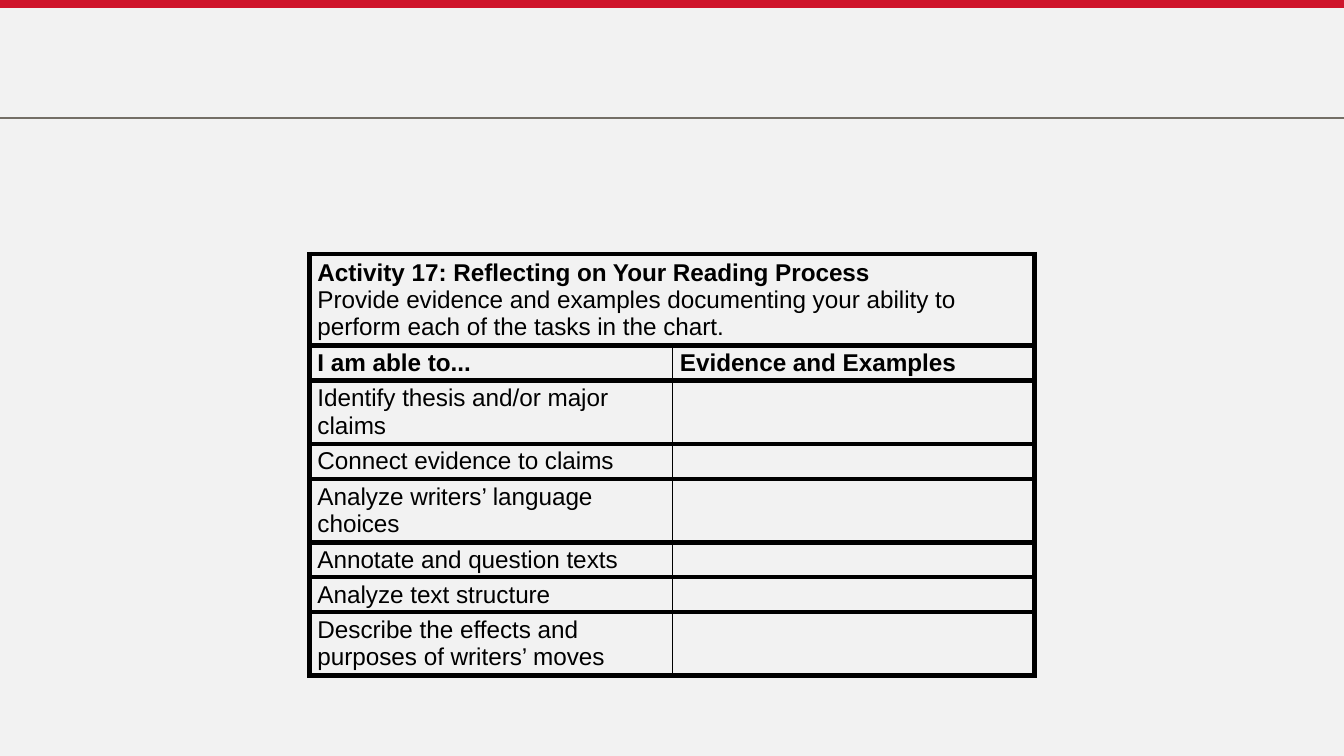
from lxml.etree import SubElement
from pptx import Presentation
from pptx.dml.color import RGBColor
from pptx.enum.shapes import MSO_CONNECTOR, MSO_SHAPE
from pptx.enum.text import MSO_ANCHOR
from pptx.oxml import parse_xml
from pptx.oxml.ns import nsdecls, qn
from pptx.util import Cm, Pt

COLORS = {"background": "F2F2F2", "bar": "CF142B", "rule": "746F66", "ink": "000000"}
WIDTH, HEIGHT = 25.4, 14.29
TABLE_LEFT, TABLE_TOP, COLUMN_WIDTH = 5.85, 4.8, 6.85
ONE_LINE, TWO_LINES, THREE_LINES = 0.66, 1.2, 1.73
THIN, ROW_RULE, LEFT_EDGE, RIGHT_EDGE = 0.5, 2.72, 2.96, 3.04
TITLE = "Activity 17: Reflecting on Your Reading Process"
INSTRUCTION = (
    "Provide evidence and examples documenting your ability to "
    "perform each of the tasks in the chart."
)
HEADINGS = ("I am able to...", "Evidence and Examples")
TASKS = [
    ("Identify thesis and/or major claims", TWO_LINES),
    ("Connect evidence to claims", ONE_LINE),
    ("Analyze writers’ language choices", TWO_LINES),
    ("Annotate and question texts", ONE_LINE),
    ("Analyze text structure", ONE_LINE),
    ("Describe the effects and purposes of writers’ moves", TWO_LINES),
]


def color(name):
    """Return the named colour."""
    return RGBColor.from_string(COLORS[name])


def add_bar(slide):
    """Add the coloured bar along the top edge."""
    bar = slide.shapes.add_shape(MSO_SHAPE.RECTANGLE, 0, 0, Cm(WIDTH), Cm(0.15))
    bar.shadow.inherit = False
    bar.fill.solid()
    bar.fill.fore_color.rgb = color("bar")
    bar.line.fill.background()


def add_rule(slide):
    """Add the thin rule below the title area."""
    top = Cm(2.23)
    rule = slide.shapes.add_connector(MSO_CONNECTOR.STRAIGHT, 0, top, Cm(WIDTH), top)
    rule.line.color.rgb = color("rule")
    rule.line.width = Pt(0.75)
    SubElement(rule._element.spPr, qn("a:effectLst"))


def set_borders(cell, left, right, top, bottom):
    """Draw the four borders of a cell with widths in points."""
    properties = cell._tc.get_or_add_tcPr()
    for index, (side, width) in enumerate(zip("LRTB", (left, right, top, bottom))):
        border = parse_xml(
            f'<a:ln{side} {nsdecls("a")} w="{Pt(width)}"><a:solidFill>'
            f'<a:srgbClr val="{COLORS["ink"]}"/></a:solidFill></a:ln{side}>'
        )
        properties.insert(index, border)


def fill_cell(cell, *lines):
    """Write (text, bold) lines into a transparent cell."""
    cell.fill.background()
    cell.vertical_anchor = MSO_ANCHOR.MIDDLE
    cell.margin_left = cell.margin_right = Cm(0.15)
    cell.margin_top = cell.margin_bottom = Cm(0.05)
    cell.text = "\n".join(text for text, bold in lines)
    for paragraph, (text, bold) in zip(cell.text_frame.paragraphs, lines):
        paragraph.font.name = "Arial"
        paragraph.font.size = Pt(13)
        paragraph.font.bold = bold
        paragraph.font.color.rgb = color("ink")


def add_reflection_table(slide):
    """Add the table of reading tasks and blank evidence cells."""
    heights = [THREE_LINES, ONE_LINE] + [height for task, height in TASKS]
    table = slide.shapes.add_table(
        len(heights), 2, Cm(TABLE_LEFT), Cm(TABLE_TOP),
        Cm(2 * COLUMN_WIDTH), Cm(sum(heights)),
    ).table
    table.first_row = table.horz_banding = False
    for column in table.columns:
        column.width = Cm(COLUMN_WIDTH)
    for row, height in zip(table.rows, heights):
        row.height = Cm(height)

    title_cell = table.cell(0, 0)
    title_cell.merge(table.cell(0, 1))
    fill_cell(title_cell, (TITLE, True), (INSTRUCTION, False))
    set_borders(title_cell, LEFT_EDGE, RIGHT_EDGE, 2.64, ROW_RULE)

    rows = [HEADINGS] + [(task, "") for task, height in TASKS]
    for row_index, texts in enumerate(rows, start=1):
        bottom = LEFT_EDGE if row_index == len(rows) else ROW_RULE
        sides = ((LEFT_EDGE, THIN), (THIN, RIGHT_EDGE))
        for column_index, (text, (left, right)) in enumerate(zip(texts, sides)):
            cell = table.cell(row_index, column_index)
            fill_cell(cell, (text, row_index == 1))
            set_borders(cell, left, right, ROW_RULE, bottom)


def main():
    """Build and save the slide."""
    presentation = Presentation()
    presentation.slide_width = Cm(WIDTH)
    presentation.slide_height = Cm(HEIGHT)
    slide = presentation.slides.add_slide(presentation.slide_layouts[6])
    slide.background.fill.solid()
    slide.background.fill.fore_color.rgb = color("background")
    add_bar(slide)
    add_rule(slide)
    add_reflection_table(slide)
    presentation.save("out.pptx")


if __name__ == "__main__":
    main()
